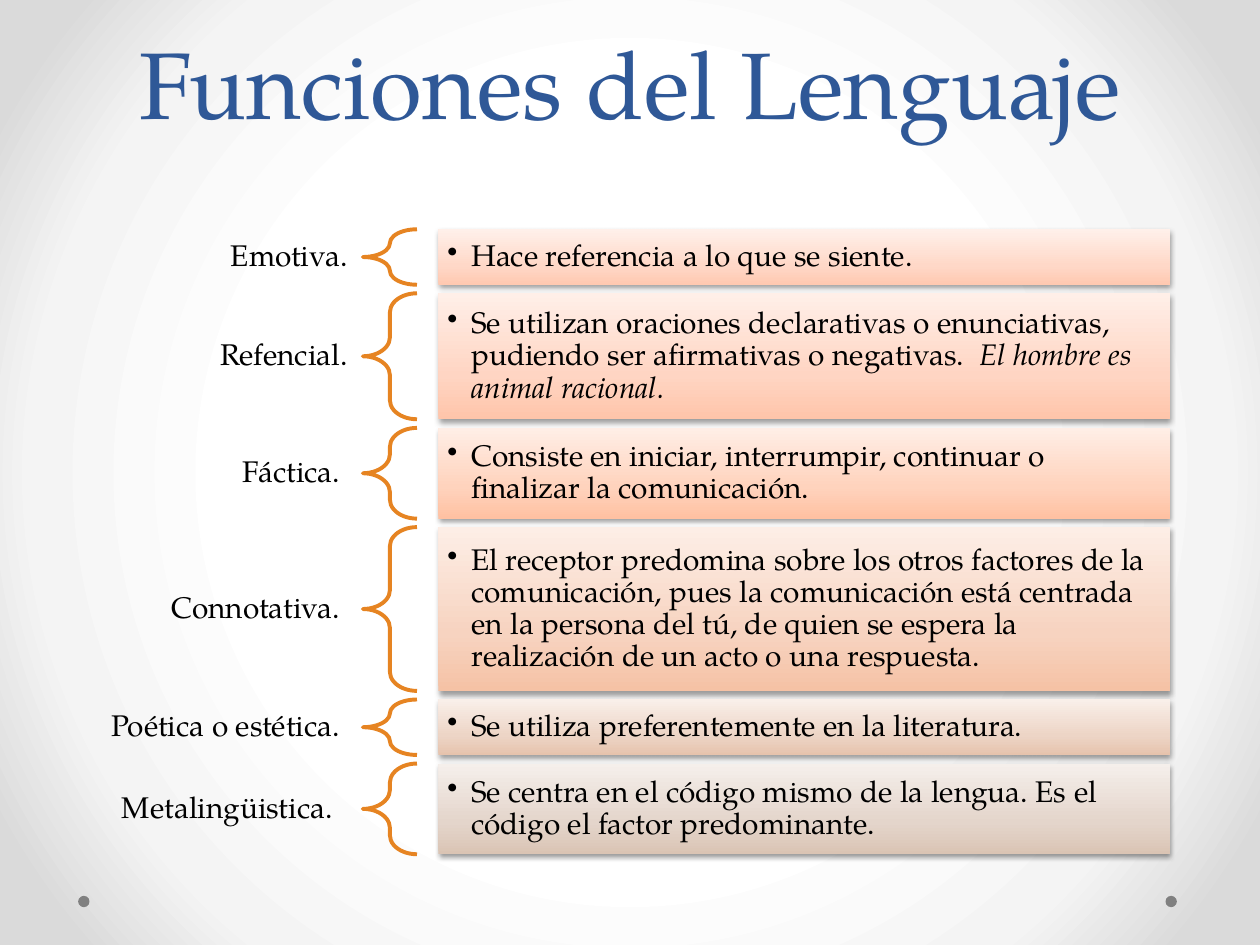
from lxml.etree import SubElement
from pptx import Presentation
from pptx.dml.color import RGBColor
from pptx.enum.shapes import MSO_SHAPE as SHAPE
from pptx.enum.text import MSO_ANCHOR as ANCHOR, PP_ALIGN as ALIGN
from pptx.oxml import parse_xml
from pptx.oxml.ns import nsdecls, qn
from pptx.util import Inches, Pt

FONT = "TeX Gyre Pagella"


def rgb(color):
    return RGBColor.from_string(color)


def style(p, size, color):
    for r in p.runs:
        r.font.name = FONT
        r.font.size = Pt(size)
        r.font.color.rgb = rgb(color)


rows = [
    ("Emotiva.", 0.44, ("FFC9B1", "FFD8C8", "FFF0EA"),
     ["Hace referencia a lo que se siente."]),
    ("Refencial.", 1, ("FFC5AA", "FFD5C3", "FFEFE8"),
     ["Se utilizan oraciones declarativas o enunciativas, pudiendo ser "
      "afirmativas o negativas.  ", "El hombre es animal racional."]),
    ("Fáctica. ", 0.72, ("FFC1A2", "FFD3BD", "FFEEE6"),
     ["Consiste en iniciar, interrumpir, continuar o finalizar la comunicación."]),
    ("Connotativa. ", 1.3, ("F5C2A5", "F7D3C0", "FDEEE6"),
     ["El receptor predomina sobre los otros factores de la comunicación, "
      "pues la comunicación está centrada en la persona del tú, de quien se "
      "espera la realización de un acto o una respuesta."]),
    ("Poética o estética. ", 0.44, ("E6C3AD", "EDD5C6", "F9EFE9"),
     ["Se utiliza preferentemente en la literatura."]),
    ("Metalingüistica.  ", 0.72, ("DAC4B4", "E4D5CB", "F5EFEB"),
     ["Se centra en el código mismo de la lengua. Es el código el factor "
      "predominante."]),
]

prs = Presentation()
prs.slide_width, prs.slide_height = Inches(10), Inches(7.5)
s = prs.slides.add_slide(prs.slide_layouts[6])

s._element.cSld.insert(0, parse_xml(
    f'<p:bg {nsdecls("p", "a")}><p:bgPr><a:gradFill rotWithShape="1"><a:gsLst>'
    '<a:gs pos="50000"><a:srgbClr val="FFFFFF"/></a:gs>'
    '<a:gs pos="76000"><a:srgbClr val="F4F4F4"/></a:gs>'
    '<a:gs pos="92000"><a:srgbClr val="DADADA"/></a:gs></a:gsLst>'
    '<a:path path="circle"><a:fillToRect l="50000" t="50000" r="50000" b="50000"/>'
    '</a:path></a:gradFill><a:effectLst/></p:bgPr></p:bg>'))

for x in (9.25, 0.62):
    sp = s.shapes.add_shape(SHAPE.OVAL, Inches(x), Inches(7.11), Inches(0.09), Inches(0.09))
    sp.shadow.inherit = False
    sp.fill.solid()
    sp.fill.fore_color.rgb = rgb("808080")
    sp.line.fill.background()

tf = s.shapes.add_textbox(Inches(0.5), Inches(0), Inches(9), Inches(1.15)).text_frame
tf.word_wrap = True
tf.vertical_anchor = ANCHOR.BOTTOM
p = tf.paragraphs[0]
p.text = "Funciones del Lenguaje"
p.alignment = ALIGN.CENTER
p.line_spacing = Pt(58)
style(p, 54, "2F5897")

top, bottom = 1.82, 6.78
gap = (bottom - top - sum(row[1] for row in rows)) / (len(rows) - 1)

for name, height, colors, texts in rows:
    y, h = Inches(top), Inches(height)

    label_y = Inches(top + (height - 0.39) / 2)
    tf = s.shapes.add_textbox(Inches(0.75), label_y, Inches(2.14), Inches(0.39)).text_frame
    tf.word_wrap = True
    tf.vertical_anchor = ANCHOR.MIDDLE
    tf.margin_left = tf.margin_right = Inches(0.13)
    p = tf.paragraphs[0]
    p.text = name
    p.alignment = ALIGN.RIGHT
    p.line_spacing = 0.9
    style(p, 17, "000000")

    brace = s.shapes.add_shape(SHAPE.LEFT_BRACE, Inches(2.88), y, Inches(0.43), h)
    brace.shadow.inherit = False
    brace.adjustments[0] = 0.35
    brace.fill.background()
    brace.line.color.rgb = rgb("E68422")
    brace.line.width = Pt(2.25)

    box = s.shapes.add_shape(SHAPE.RECTANGLE, Inches(3.48), y, Inches(5.81), h)
    box.shadow.inherit = False
    box.line.fill.background()
    box.fill.gradient()
    box.fill.gradient_angle = 90
    stops = box.fill._fill._gradFill.find(qn("a:gsLst"))
    for stop in list(stops):
        stops.remove(stop)
    for pos, color in zip((0, 35, 100), colors):
        stop = SubElement(stops, qn("a:gs"), pos=str(pos * 1000))
        SubElement(stop, qn("a:srgbClr"), val=color)
    effects = box._element.spPr.find(qn("a:effectLst"))
    effects.append(parse_xml(
        f'<a:outerShdw {nsdecls("a")} blurRad="{Pt(3.1)}" dist="{Pt(1.6)}" '
        'dir="5400000" rotWithShape="0"><a:srgbClr val="000000">'
        '<a:alpha val="38000"/></a:srgbClr></a:outerShdw>'))

    tf = box.text_frame
    tf.word_wrap = True
    tf.vertical_anchor = ANCHOR.MIDDLE
    tf.margin_left = tf.margin_right = tf.margin_top = tf.margin_bottom = Inches(0.07)
    p = tf.paragraphs[0]
    p.alignment = ALIGN.LEFT
    p.line_spacing = 0.9
    for i, text in enumerate(texts):
        r = p.add_run()
        r.text = text
        r.font.italic = i == 1
    style(p, 17, "000000")
    pPr = p._p.get_or_add_pPr()
    pPr.set("marL", str(Inches(0.19)))
    pPr.set("indent", str(Inches(-0.19)))
    SubElement(pPr, qn("a:buChar"), char="•")

    top += height + gap

prs.save("out.pptx")
